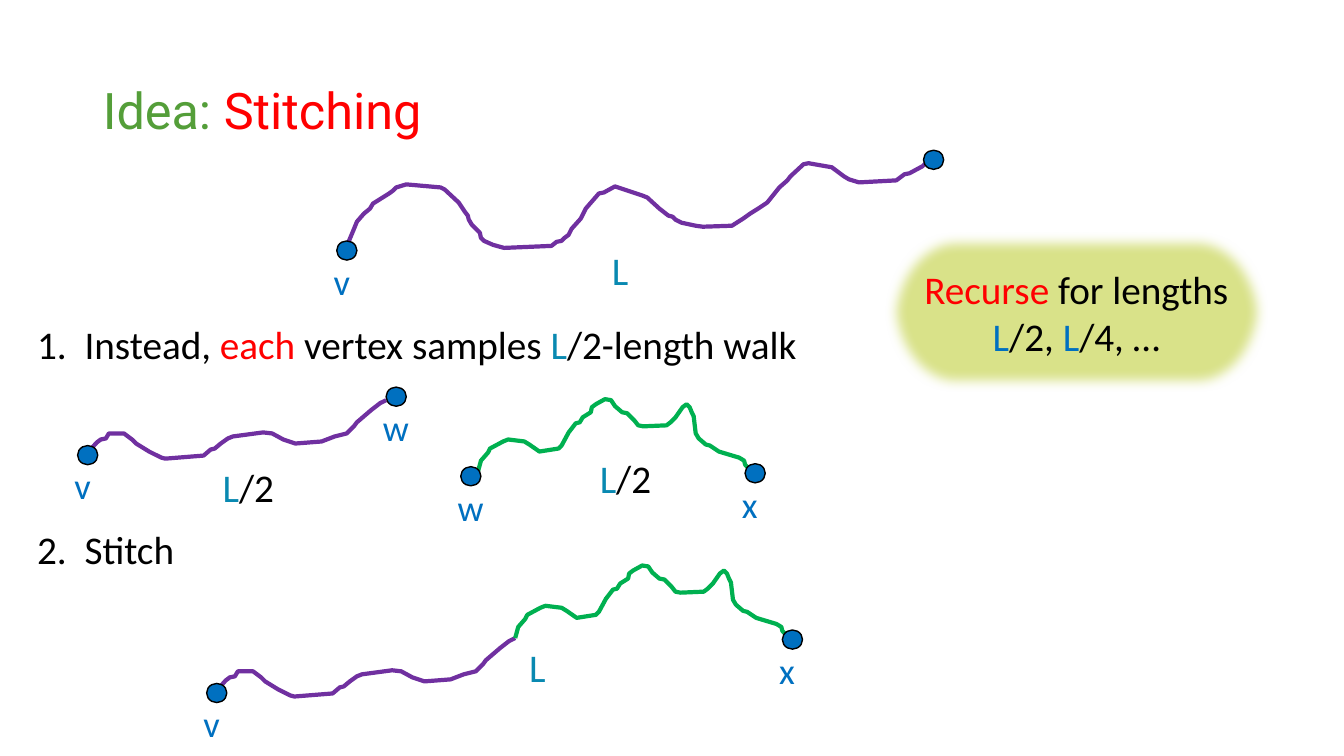
import dataclasses

import lxml.etree
import pptx
import pptx.dml.color
import pptx.enum.dml
import pptx.enum.shapes
import pptx.enum.text
import pptx.oxml.ns
import pptx.util

PX = 9144


@dataclasses.dataclass(frozen=True)
class Theme:
    heading_font: str = "Roboto"
    body_font: str = "Calibri"
    title_size: int = 36
    body_size: int = 28
    vertex_size: int = 26
    black: str = "000000"
    red: str = "FF0000"
    leaf: str = "549E39"
    teal: str = "0989B1"
    blue: str = "0070C0"
    purple: str = "7030A0"
    green: str = "00B050"
    lime: str = "D9E289"


@dataclasses.dataclass(frozen=True)
class Box:
    left: int
    top: int
    width: int
    height: int


THEME = Theme()
SHAPES = pptx.enum.shapes.MSO_SHAPE
ALIGN = pptx.enum.text.PP_ALIGN
ANCHOR = pptx.enum.text.MSO_ANCHOR

FULL_WALK = [
    (3, -7), (8, -19), (10, -24), (17, -32), (23, -37), (26, -42), (42, -52), (46, -55),
    (49, -58), (59, -61), (93, -58), (97, -56), (111, -43), (117, -34), (120, -30),
    (121, -26), (124, -21), (132, -13), (133, -8), (136, -5), (145, -1), (156, 2),
    (203, 0), (208, -4), (213, -5), (216, -8), (220, -11), (223, -17), (232, -27),
    (237, -37), (250, -52), (255, -53), (266, -59), (293, -50), (298, -48), (310, -37),
    (319, -30), (323, -29), (326, -26), (332, -23), (346, -20), (353, -19), (382, -20),
    (393, -27), (400, -32), (408, -37), (417, -43), (429, -58), (437, -65), (440, -69),
    (453, -81), (458, -82), (481, -78), (493, -69), (498, -66), (508, -63), (545, -65),
    (553, -71), (558, -72), (571, -79), (574, -82), (577, -88),
]
FIRST_HALF = [
    (9, -10), (13, -13), (18, -14), (21, -19), (36, -19), (44, -13), (48, -9), (61, -1),
    (73, 5), (77, 6), (115, 3), (122, -3), (126, -4), (132, -9), (139, -14), (144, -16),
    (174, -20), (183, -19), (194, -13), (200, -11), (206, -9), (232, -11), (245, -16),
    (257, -19), (264, -26), (267, -30), (281, -42), (290, -49), (296, -52),
]
SECOND_HALF = [
    (3, -11), (10, -19), (12, -23), (25, -30), (30, -32), (46, -30), (51, -27), (61, -20),
    (80, -23), (83, -26), (90, -39), (97, -48), (101, -49), (104, -54), (112, -59),
    (113, -64), (117, -67), (126, -72), (132, -71), (136, -65), (143, -59), (148, -58),
    (155, -51), (159, -46), (164, -45), (187, -46), (191, -49), (196, -54), (203, -64),
    (207, -67), (210, -64), (212, -59), (214, -55), (216, -38), (219, -33), (226, -27),
    (230, -26), (239, -20), (249, -17), (259, -14), (264, -11), (265, -7), (268, -4),
    (269, 0),
]


def color(code):
    return pptx.dml.color.RGBColor.from_string(code)


def emu(box):
    return [side * PX for side in (box.left, box.top, box.width, box.height)]


def write(shape, runs, font=THEME.body_font, size=THEME.body_size, align=ALIGN.LEFT,
          anchor=ANCHOR.TOP, wrap=True, line_spacing=None):
    frame = shape.text_frame
    frame.word_wrap = wrap
    frame.auto_size = pptx.enum.text.MSO_AUTO_SIZE.NONE
    frame.vertical_anchor = anchor
    paragraph = frame.paragraphs[0]
    paragraph.alignment = align
    paragraph.line_spacing = line_spacing
    for text, code in runs:
        run = paragraph.add_run()
        run.text = text
        run.font.name = font
        run.font.size = pptx.util.Pt(size)
        run.font.color.rgb = color(code)
    return paragraph


def add_text(slide, box, runs, **style):
    return write(slide.shapes.add_textbox(*emu(box)), runs, **style)


def add_filled(slide, kind, box, fill, line):
    shape = slide.shapes.add_shape(kind, *emu(box))
    shape.shadow.inherit = False
    shape.fill.solid()
    shape.fill.fore_color.rgb = color(fill)
    shape.line.color.rgb = color(line)
    shape.line.width = pptx.util.Pt(1)
    return shape


def draw_title(slide, box):
    title = slide.shapes.title
    title.left, title.top, title.width, title.height = emu(box)
    write(title, [("Idea: ", THEME.leaf), ("Stitching", THEME.red)], font=THEME.heading_font,
          size=THEME.title_size, anchor=ANCHOR.MIDDLE, line_spacing=0.9)


def draw_step(slide, box, number, runs):
    properties = add_text(slide, box, runs)._p.get_or_add_pPr()
    indent = 47 * PX
    properties.set("marL", str(indent))
    properties.set("indent", str(-indent))
    lxml.etree.SubElement(properties, pptx.oxml.ns.qn("a:buFont"), typeface=THEME.body_font)
    lxml.etree.SubElement(properties, pptx.oxml.ns.qn("a:buAutoNum"),
                          type="arabicPeriod", startAt=str(number))


def draw_strand(slide, start, points, code):
    left, top = start
    builder = slide.shapes.build_freeform(left, top, scale=PX)
    builder.add_line_segments([(left + x, top + y) for x, y in points], close=False)
    strand = builder.convert_to_shape()
    strand.shadow.inherit = False
    strand.fill.background()
    strand.line.color.rgb = color(code)
    strand.line.width = pptx.util.Pt(3)
    return left + points[-1][0], top + points[-1][1]


def draw_vertex(slide, left, top, name):
    add_filled(slide, SHAPES.OVAL, Box(left, top, 20, 19), THEME.blue, THEME.black)
    if name:
        add_text(slide, Box(left - 13, top + 13, 46, 54), [(name, THEME.blue)],
                 size=THEME.vertex_size)


def draw_walk(slide, box, start, strands, vertices, length, length_at):
    position = (box.left + start[0], box.top + start[1])
    for points, code in strands:
        position = draw_strand(slide, position, points, code)
    for x, y, name in vertices:
        draw_vertex(slide, box.left + x, box.top + y, name)
    width = 72 if len(length) > 1 else 37
    add_text(slide, Box(box.left + length_at[0], box.top + length_at[1], width, 57),
             length, wrap=False)


def draw_recursion_note(slide, box):
    note = add_filled(slide, SHAPES.FLOWCHART_TERMINATOR, box, THEME.lime, THEME.green)
    note.line.dash_style = pptx.enum.dml.MSO_LINE.DASH
    effects = note._element.spPr.find(pptx.oxml.ns.qn("a:effectLst"))
    lxml.etree.SubElement(effects, pptx.oxml.ns.qn("a:softEdge"), rad=str(12 * PX))
    write(note, [("Recurse", THEME.red), (" for lengths ", THEME.black), ("L", THEME.blue),
                 ("/2, ", THEME.black), ("L", THEME.blue), ("/4, …", THEME.black)],
          align=ALIGN.CENTER, anchor=ANCHOR.MIDDLE)


def main():
    presentation = pptx.Presentation()
    presentation.slide_width, presentation.slide_height = 1333 * PX, 750 * PX
    slide = presentation.slides.add_slide(presentation.slide_layouts[5])
    whole = [("L", THEME.teal)]
    half = whole + [("/2", THEME.black)]
    first = (FIRST_HALF, THEME.purple)
    second = (SECOND_HALF, THEME.green)

    draw_title(slide, Box(92, 40, 1150, 145))
    draw_walk(slide, Box(334, 149, 602, 157), (10, 95), [(FULL_WALK, THEME.purple)],
              [(0, 90, "v"), (582, 0, "")], whole, (263, 90))
    draw_step(slide, Box(27, 313, 800, 57), 1,
              [("Instead, ", THEME.black), ("each", THEME.red),
               (" vertex samples ", THEME.black), ("L", THEME.teal),
               ("/2-length walk", THEME.black)])
    draw_walk(slide, Box(77, 384, 326, 128), (10, 65), [first],
              [(0, 58, "v"), (306, 0, "w")], half, (134, 71))
    draw_walk(slide, Box(457, 396, 302, 134), (17, 72), [second],
              [(0, 67, "w"), (282, 64, "x")], half, (128, 50))
    draw_step(slide, Box(27, 516, 180, 57), 2, [("Stitch", THEME.black)])
    draw_walk(slide, Box(205, 561, 591, 184), (10, 124), [first, second],
              [(0, 117, "v"), (571, 64, "x")], whole, (310, 72))
    draw_recursion_note(slide, Box(877, 230, 381, 159))
    presentation.save("out.pptx")


if __name__ == "__main__":
    main()
